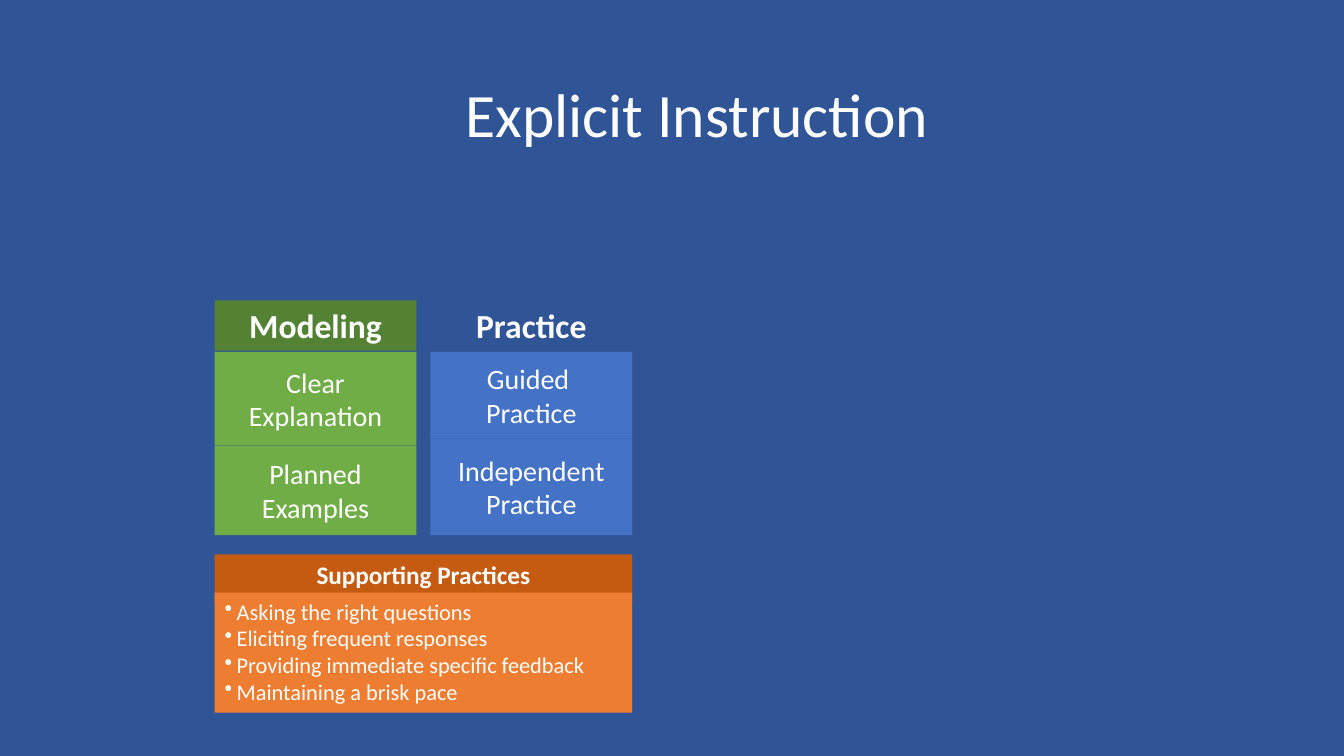
import pptx
import pptx.util
import pptx.dml.color
import pptx.enum.shapes
import pptx.enum.text
import pptx.oxml.ns
import lxml.etree

Inches = pptx.util.Inches
ALIGN = pptx.enum.text.PP_ALIGN
ANCHOR = pptx.enum.text.MSO_ANCHOR
NAVY, WHITE = "2F5597", "FFFFFF"
LEFT, TOP, WIDE, STEP = 2.13, 2.98, 2, 2.14


def paint(fill, color):
    """Give a fill a solid colour from a hex string."""
    fill.solid()
    fill.fore_color.rgb = pptx.dml.color.RGBColor.from_string(color)


def add_bullet(para, indent):
    """Give a paragraph a round bullet, a hanging indent and a tab stop."""
    props = para._p.get_or_add_pPr()
    props.set("marL", str(Inches(indent)))
    props.set("indent", str(-Inches(indent)))
    name = pptx.oxml.ns.qn
    lxml.etree.SubElement(props, name("a:buChar"), char="•")
    tabs = lxml.etree.SubElement(props, name("a:tabLst"))
    lxml.etree.SubElement(tabs, name("a:tab"), pos=str(Inches(indent)), algn="l")


def write(shape, lines, size, bold=False, align=ALIGN.CENTER,
          anchor=ANCHOR.MIDDLE, bullet=False, spacing=None):
    """Write lines of text into a shape, one paragraph each."""
    frame = shape.text_frame
    frame.word_wrap = True
    frame.vertical_anchor = anchor
    for i, line in enumerate(lines):
        para = frame.add_paragraph() if i else frame.paragraphs[0]
        para.alignment = align
        if spacing:
            para.line_spacing = spacing
        if bullet:
            add_bullet(para, 0.12)
        run = para.add_run()
        run.text = line
        run.font.name = "Calibri"
        run.font.size = pptx.util.Pt(size)
        run.font.bold = bold
        paint(run.font.fill, WHITE)


def add_block(slide, box, color, lines, size, **style):
    """Add a plain filled rectangle with text."""
    kind = pptx.enum.shapes.MSO_SHAPE.RECTANGLE
    shape = slide.shapes.add_shape(kind, *map(Inches, box))
    shape.shadow.inherit = False
    shape.line.fill.background()
    paint(shape.fill, color)
    write(shape, lines, size, **style)


def add_title(slide, box):
    """Add the slide heading."""
    shape = slide.shapes.add_textbox(*map(Inches, box))
    write(shape, ["Explicit Instruction"], 44, spacing=0.9)


def add_column(slide, box, split, colors, head, upper, lower):
    """Add a header over two stacked blocks, which meet at split below it."""
    left, top, width, height = box
    dark, light = colors
    mid = top + 0.51
    add_block(slide, (left, mid + split, width, top + height - mid - split),
              light, lower, 20)
    add_block(slide, (left, mid, width, split), light, upper, 20)
    add_block(slide, (left, top, width, 0.5), dark, [head], 24,
              bold=True, anchor=ANCHOR.TOP)


def add_support(slide, box):
    """Add the supporting practices header and its bullet list."""
    left, top, width, height = box
    add_block(slide, (left, top, width, 0.48), "C55A11",
              ["Supporting Practices"], 18, bold=True, anchor=ANCHOR.TOP)
    add_block(slide, (left, top + 0.38, width, height - 0.38), "ED7D31",
              ["Asking the right questions", "Eliciting frequent responses",
               "Providing immediate specific feedback",
               "Maintaining a brisk pace"],
              16, align=ALIGN.LEFT, anchor=ANCHOR.TOP, bullet=True)


def main():
    """Build the slide and save it."""
    deck = pptx.Presentation()
    deck.slide_width, deck.slide_height = Inches(13.33), Inches(7.5)
    slide = deck.slides.add_slide(deck.slide_layouts[6])
    paint(slide.background.fill, NAVY)
    columns = [
        (0.93, ("548235", "70AD47"), "Modeling",
         ["Clear Explanation"], ["Planned", "Examples"]),
        (0.86, (NAVY, "4472C4"), "Practice",
         ["Guided ", "Practice"], ["Independent Practice"]),
    ]
    for i, column in enumerate(columns):
        add_column(slide, (LEFT + i * STEP, TOP, WIDE, 2.33), *column)
    add_support(slide, (LEFT, 5.5, STEP + WIDE, 1.57))
    add_title(slide, (2.42, 0.35, 8.99, 1.63))
    deck.save("out.pptx")


if __name__ == "__main__":
    main()
